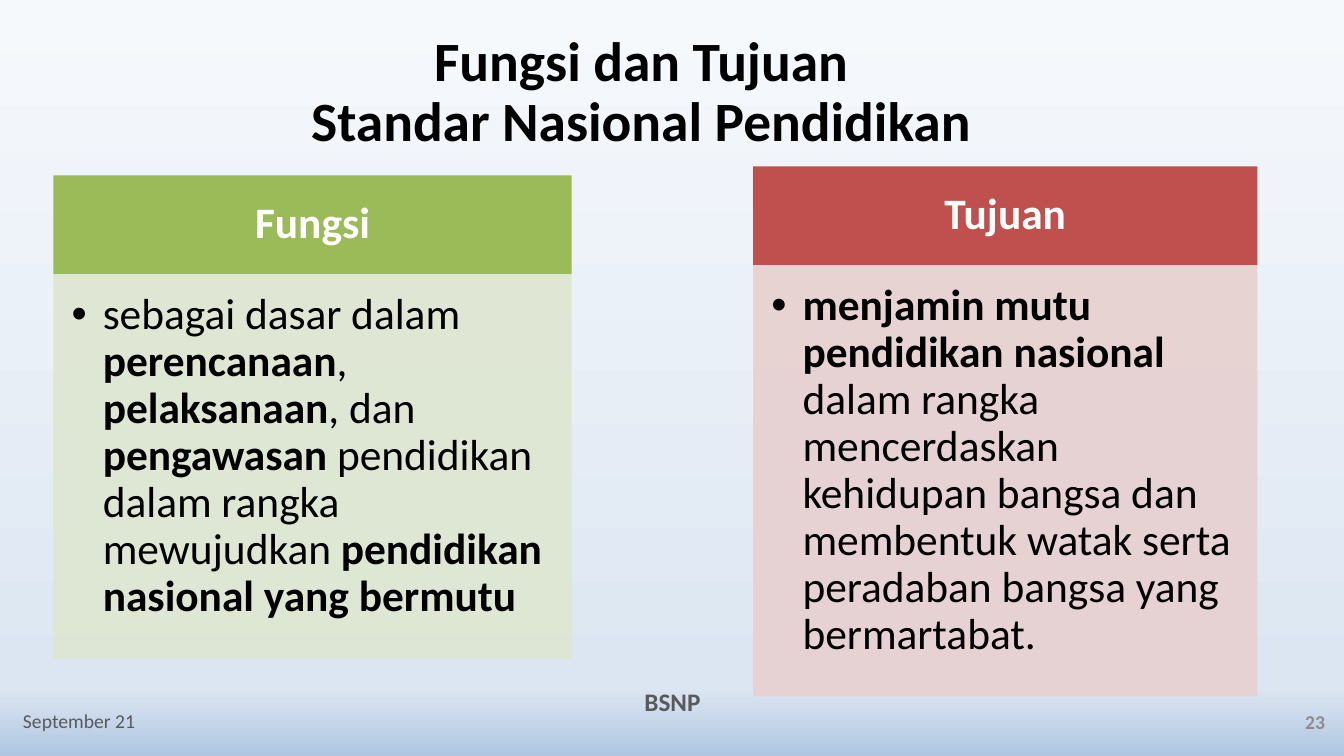
from lxml.etree import SubElement
from pptx import Presentation
from pptx.dml.color import RGBColor
from pptx.enum.text import MSO_ANCHOR as Anchor, MSO_AUTO_SIZE as AutoSize, PP_ALIGN as Align
from pptx.oxml.ns import qn
from pptx.util import Inches, Pt

COLORS = {
    "black": "000000", "white": "FFFFFF", "date": "595959", "number": "8C8C8C",
    "green": "9BBB59", "light green": "DEE7D1", "red": "C0504D", "light red": "E8D0D0",
    "sky": "F6F9FC", "haze": "DCE6F2", "horizon": "B0C6E1",
}


class SlideBuilder:
    font = "Calibri"
    heading_height = 0.98
    heading_insets = (0.24, 0.14, 0.24, 0.14)
    body_insets = (0.18, 0.18, 0.24, 0.27)
    text_insets = (0.1, 0.05, 0.1, 0.05)

    def __init__(self, page):
        self.page = page

    def background(self, stops):
        self.page.background.fill.gradient()
        gradient = self.page._element.find(".//" + qn("a:gradFill"))
        for child in list(gradient):
            gradient.remove(child)
        stop_list = SubElement(gradient, qn("a:gsLst"))
        for percent, color in stops:
            stop = SubElement(stop_list, qn("a:gs"), pos=str(percent * 1000))
            SubElement(stop, qn("a:srgbClr"), val=COLORS[color])
        SubElement(gradient, qn("a:lin"), ang="5400000", scaled="0")

    def place(self, box, at, insets, anchor):
        box.left, box.top, box.width, box.height = map(Inches, at)
        frame = box.text_frame
        frame.word_wrap = True
        frame.auto_size = AutoSize.NONE
        frame.vertical_anchor = anchor
        (frame.margin_left, frame.margin_top,
         frame.margin_right, frame.margin_bottom) = map(Inches, insets)
        return frame.paragraphs[0]

    def add_spans(self, para, spans, size, color, align=Align.LEFT, spacing=0.9):
        para.alignment = align
        para.line_spacing = spacing
        para.space_before = Pt(0)
        for text, bold in spans:
            span = para.add_run()
            span.text = text
            span.font.name = self.font
            span.font.size = Pt(size)
            span.font.bold = bold
            span.font.color.rgb = RGBColor.from_string(COLORS[color])

    def fill(self, box, color, opacity=100):
        box.fill.solid()
        box.fill.fore_color.rgb = RGBColor.from_string(COLORS[color])
        if opacity < 100:
            tone = box._element.spPr.find(".//" + qn("a:srgbClr"))
            SubElement(tone, qn("a:alpha"), val=str(opacity * 1000))

    def title(self, lines, at):
        para = self.place(self.page.shapes.title, at, self.text_insets, Anchor.MIDDLE)
        for index, line in enumerate(lines):
            if index:
                para.add_line_break()
            self.add_spans(para, [(line, True)], 39.6, "black", Align.CENTER)

    def panel(self, first_index, at, color, heading, spans):
        left, top, width, body_height = at
        head = self.page.placeholders[first_index]
        para = self.place(head, (left, top, width, self.heading_height),
                          self.heading_insets, Anchor.MIDDLE)
        self.fill(head, color)
        self.add_spans(para, [(heading, True)], 31, "white", Align.CENTER)

        body = self.page.placeholders[first_index + 1]
        para = self.place(body, (left, top + self.heading_height, width, body_height),
                          self.body_insets, Anchor.TOP)
        self.fill(body, "light " + color, 90)
        settings = para._p.get_or_add_pPr()
        settings.set("marL", str(Inches(0.31)))
        settings.set("indent", str(-Inches(0.31)))
        SubElement(settings, qn("a:buFont"), typeface="Arial")
        SubElement(settings, qn("a:buChar"), char="•")
        self.add_spans(para, spans, 31, "black")

    def footer(self, text, at, size, color, align, bold):
        box = self.page.shapes.add_textbox(*map(Inches, at))
        para = self.place(box, at, self.text_insets, Anchor.MIDDLE)
        self.add_spans(para, [(text, bold)], size, color, align, 1.0)


def main():
    deck = Presentation()
    deck.slide_width, deck.slide_height = Inches(13.33), Inches(7.5)
    slide = SlideBuilder(deck.slides.add_slide(deck.slide_layouts.get_by_name("Comparison")))
    slide.background([(0, "sky"), (91, "haze"), (100, "horizon")])
    slide.title(["Fungsi dan Tujuan", "Standar Nasional Pendidikan"], (1.29, 0.3, 10.14, 1.25))
    slide.panel(1, (0.53, 1.74, 5.14, 3.82), "green", "Fungsi", [
        ("sebagai dasar dalam ", False),
        ("perencanaan", True),
        (", ", False),
        ("pelaksanaan", True),
        (", dan ", False),
        ("pengawasan ", True),
        ("pendidikan dalam rangka mewujudkan ", False),
        ("pendidikan nasional yang bermutu", True),
    ])
    slide.panel(3, (7.47, 1.65, 5, 4.28), "red", "Tujuan", [
        ("menjamin mutu pendidikan nasional ", True),
        ("dalam rangka mencerdaskan kehidupan bangsa dan membentuk watak serta "
         "peradaban bangsa yang bermartabat.", False),
    ])
    slide.footer("September 21", (0.13, 6.95, 3, 0.4), 14, "date", Align.LEFT, False)
    slide.footer("BSNP", (4.42, 6.76, 4.5, 0.4), 18, "date", Align.CENTER, True)
    slide.footer("23", (10.24, 6.96, 3, 0.4), 14, "number", Align.RIGHT, True)
    deck.save("out.pptx")


if __name__ == "__main__":
    main()
